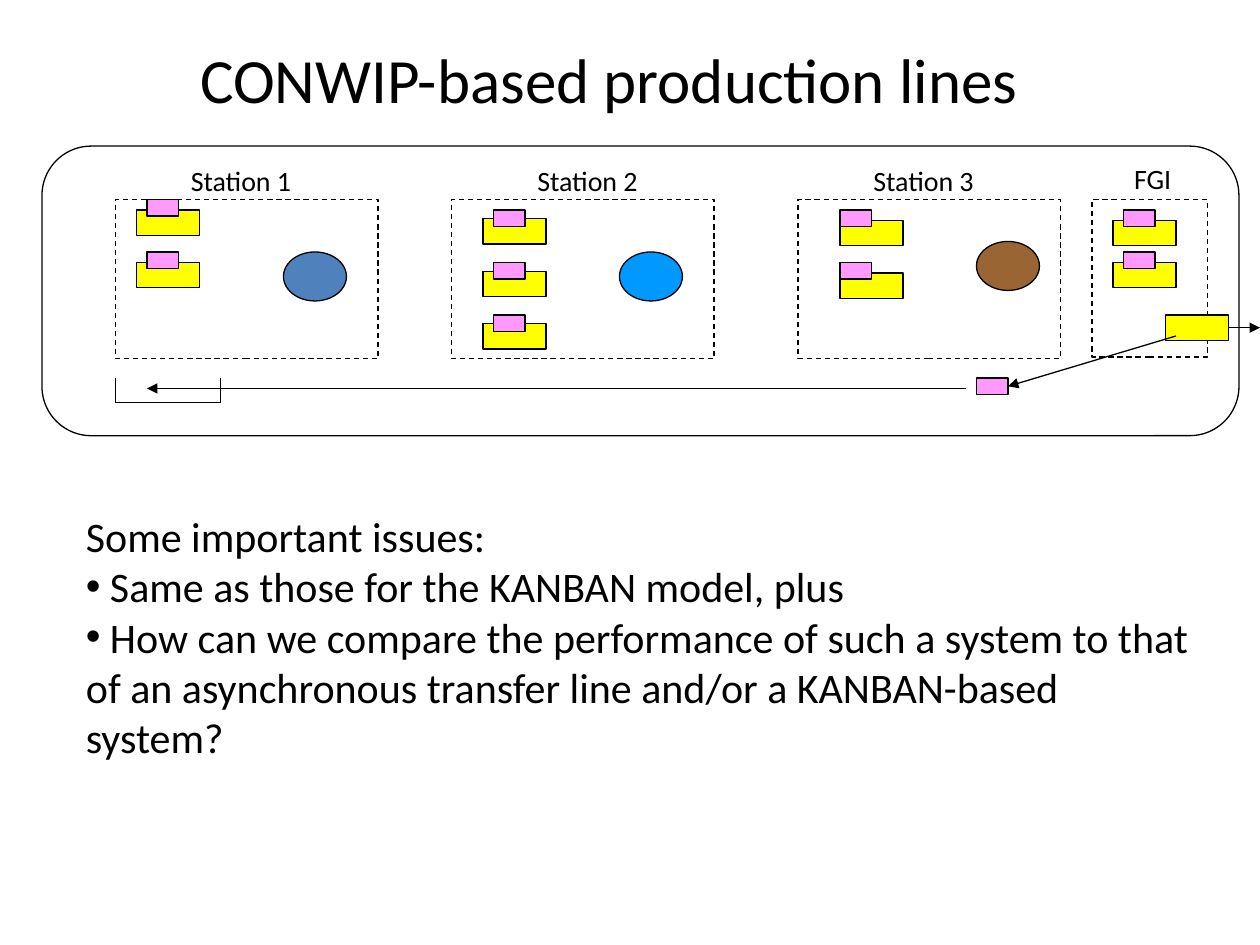
from itertools import pairwise

from lxml import etree
from pptx import Presentation
from pptx.dml import color
from pptx.enum import dml, shapes, text
from pptx.oxml import ns
from pptx.util import Pt

BLACK, YELLOW, PINK = "000000", "FFFF00", "FF99FF"
SHAPE = shapes.MSO_SHAPE
PART, TAG, MACHINE = (36, 14.5), (18, 9.5), (36, 28)


def rgb(value):
    """Return the colour for a hex string."""
    return color.RGBColor.from_string(value)


def apply(obj, values):
    """Set every attribute named in a dict."""
    for name, value in values.items():
        setattr(obj, name, value)


def add_shape(s, box, fill=None, kind=SHAPE.RECTANGLE, dash=None):
    """Add an outlined preset shape, unfilled when no fill is given."""
    sp = s.shapes.add_shape(kind, *map(Pt, box))
    sp.shadow.inherit = False
    if fill:
        sp.fill.solid()
        sp.fill.fore_color.rgb = rgb(fill)
    else:
        sp.fill.background()
    sp.line.color.rgb = rgb(BLACK)
    apply(sp.line, {"width": Pt(0.75), "dash_style": dash})
    return sp


def add_line(s, start, end, arrow=False):
    """Add a straight line, with an arrowhead at its end if asked."""
    cx = s.shapes.add_connector(shapes.MSO_CONNECTOR.STRAIGHT, *map(Pt, start + end))
    cx.line.color.rgb = rgb(BLACK)
    cx.line.width = Pt(0.75)
    if arrow:
        ln = cx.line._get_or_add_ln()
        etree.SubElement(ln, ns.qn("a:tailEnd"), type="triangle")
    etree.SubElement(cx._element.spPr, ns.qn("a:effectLst"))
    return cx


def add_text(s, box, lines, size, bullets=(), align=None, **frame):
    """Add a text box, with bullets on the line numbers listed."""
    tf = s.shapes.add_textbox(*map(Pt, box)).text_frame
    apply(tf, {"word_wrap": True, **frame})
    for i, line in enumerate(lines):
        p = tf.paragraphs[0] if i == 0 else tf.add_paragraph()
        p.alignment = align
        r = p.add_run()
        r.text = line
        apply(r.font, {"name": "Calibri", "size": Pt(size)})
        r.font.color.rgb = rgb(BLACK)
        if i in bullets:
            pPr = p._p.get_or_add_pPr()
            etree.SubElement(pPr, ns.qn("a:buFont"), typeface="Arial")
            etree.SubElement(pPr, ns.qn("a:buChar"), char="•")


def add_station(s, box, label, label_at, tag_at, count, pitch, part_shift, machine=None):
    """Draw a dashed station with its label, tagged parts and machine."""
    x, y, _, _ = box
    if machine:
        dx, dy, fill = machine
        add_shape(s, (x + dx, y + dy, *MACHINE), fill, SHAPE.OVAL)
    for i in range(count):
        tx, ty = x + tag_at[0], y + tag_at[1] + i * pitch
        add_shape(s, (tx + part_shift[0], ty + part_shift[1], *PART), YELLOW)
        add_shape(s, (tx, ty, *TAG), PINK)
    add_shape(s, box, dash=dml.MSO_LINE.DASH)
    add_text(s, (x + label_at[0], y + label_at[1], 72, 27), [label], 16, word_wrap=False,
             auto_size=text.MSO_AUTO_SIZE.SHAPE_TO_FIT_TEXT)


def add_card_loop(s, box):
    """Draw the finished part, its released card and the card's way back."""
    x, y, w, h = box
    part = add_shape(s, (x + 600, y, *PART), YELLOW)
    card = add_shape(s, (x + 492, y + 36, *TAG), PINK)
    tray = [(x, y + 36), (x, y + h), (x + 60, y + h), (x + 60, y + 36)]
    for start, end in pairwise(tray):
        add_line(s, start, end)
    add_line(s, (x + 486, y + 42), (x + 18, y + 42), True)
    out = add_line(s, (x + 636, y + 7.25), (x + w, y + 7.25), True)
    out.begin_connect(part, 3)
    release = add_line(s, (x + 606, y + 12), (x + 510, y + 40.75), True)
    release.end_connect(card, 3)


def add_production_line(s, box):
    """Draw the framed line of stations and its card loop."""
    x, y, _, _ = box
    stations = [
        (42, 150, 91, "Station 1", (36, -24), (18, 0), 2, 30, (-6, 6), (96, 30, "4F81BD")),
        (234, 150, 91, "Station 2", (42, -24), (24, 6), 3, 30, (-6, 5), (96, 30, "0099FF")),
        (432, 150, 91, "Station 3", (36, -24), (24, 6), 2, 30, (0, 6), (102, 24, "996633")),
        (600, 66, 90, "FGI", (17, -25.5), (18, 6), 2, 24, (-6, 6)),
    ]
    for dx, w, h, *details in stations:
        add_station(s, (x + dx, y + 30.5, w, h), *details)
    add_card_loop(s, (x + 42, y + 96.5, 654, 50))
    add_shape(s, box, kind=SHAPE.ROUNDED_RECTANGLE).adjustments[0] = 0.17


def add_issues(s, box):
    """Write the issues below the production line."""
    lines = [
        "Some important issues:",
        " Same as those for the KANBAN model, plus",
        " How can we compare the performance of such a system to that of an "
        "asynchronous transfer line and/or a KANBAN-based system?",
    ]
    add_text(s, box, lines, 24, bullets=(1, 2),
             auto_size=text.MSO_AUTO_SIZE.SHAPE_TO_FIT_TEXT)


def main():
    """Build and save the slide."""
    prs = Presentation()
    apply(prs, {"slide_width": Pt(720), "slide_height": Pt(540)})
    s = prs.slides.add_slide(prs.slide_layouts[6])
    add_text(s, (42, 0, 612, 90), ["CONWIP-based production lines"], 36,
             align=text.PP_ALIGN.CENTER, vertical_anchor=text.MSO_ANCHOR.MIDDLE)
    add_production_line(s, (24, 83.5, 684, 165.5))
    add_issues(s, (42, 288, 648, 151))
    prs.save("out.pptx")


if __name__ == "__main__":
    main()
